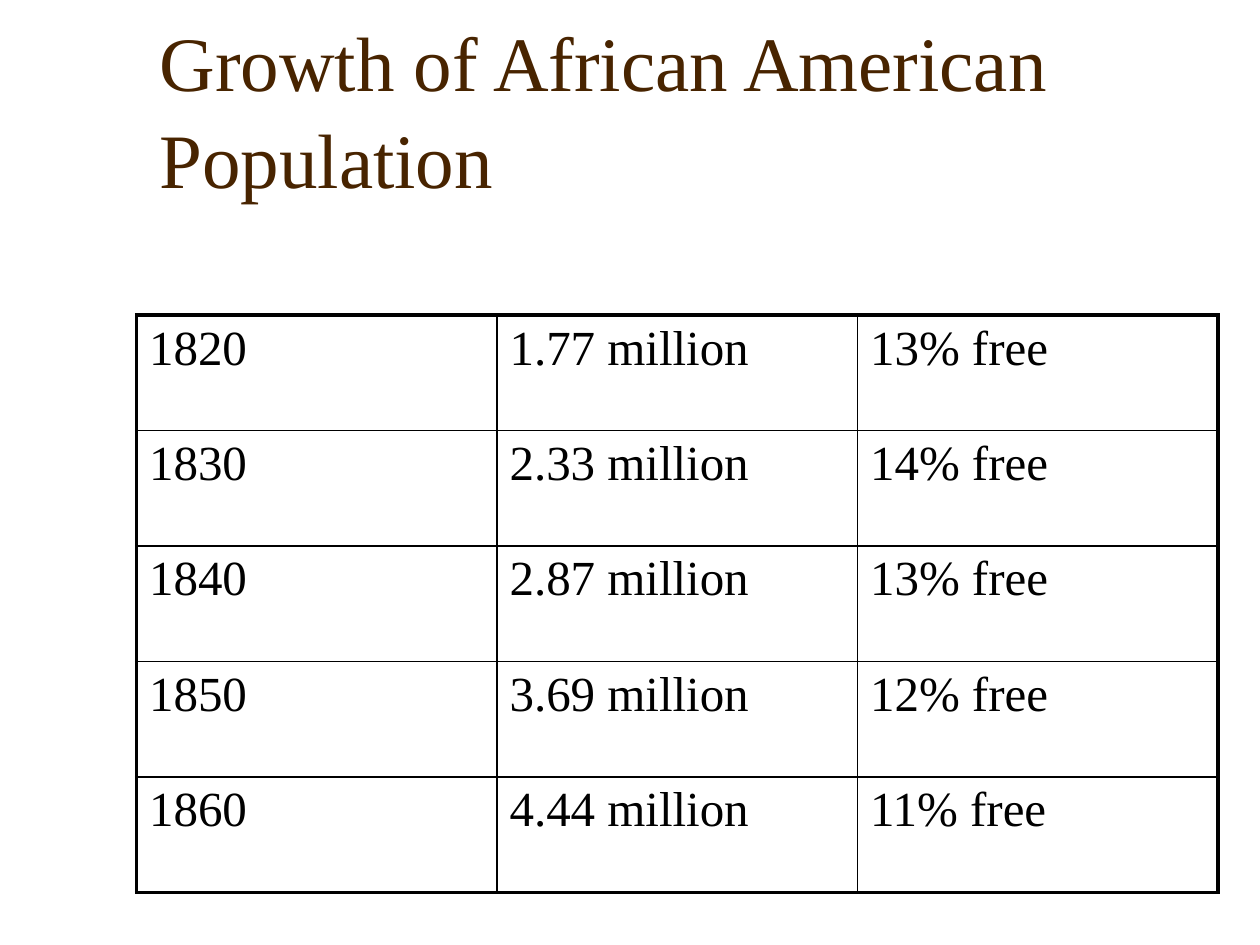
from dataclasses import dataclass

from lxml.etree import SubElement
from pptx import Presentation
from pptx.dml.color import RGBColor
from pptx.enum.text import MSO_ANCHOR, MSO_AUTO_SIZE, PP_ALIGN
from pptx.oxml.ns import qn
from pptx.slide import Slide
from pptx.util import Pt

POPULATION = [
    ("1820", "1.77 million", "13% free"),
    ("1830", "2.33 million", "14% free"),
    ("1840", "2.87 million", "13% free"),
    ("1850", "3.69 million", "12% free"),
    ("1860", "4.44 million", "11% free"),
]


def color(value):
    return RGBColor.from_string(value)


@dataclass
class SlideBuilder:
    slide: Slide
    font_name: str = "Times New Roman"
    title_color: str = "482400"
    text_color: str = "000000"
    title_size: float = 44
    cell_size: float = 28
    outer_line: float = 2.25
    inner_line: float = 1

    def format_font(self, paragraph, size, text_color):
        paragraph.font.name = self.font_name
        paragraph.font.size = Pt(size)
        paragraph.font.color.rgb = color(text_color)

    def add_title(self, text, left, top, width, height):
        title = self.slide.shapes.title
        title.left, title.top = Pt(left), Pt(top)
        title.width, title.height = Pt(width), Pt(height)
        frame = title.text_frame
        frame.text = text
        frame.word_wrap = True
        frame.auto_size = MSO_AUTO_SIZE.NONE
        frame.vertical_anchor = MSO_ANCHOR.BOTTOM
        paragraph = frame.paragraphs[0]
        paragraph.alignment = PP_ALIGN.LEFT
        paragraph.line_spacing = 1.05
        self.format_font(paragraph, self.title_size, self.title_color)

    def add_border(self, cell, side, width):
        properties = cell._tc.get_or_add_tcPr()
        line = SubElement(properties, qn(f"a:{side}"), w=str(Pt(width)))
        fill = SubElement(line, qn("a:solidFill"))
        SubElement(fill, qn("a:srgbClr"), val=self.text_color)

    def add_table(self, rows, left, top, column_width, row_height):
        row_count, column_count = len(rows), len(rows[0])
        table = self.slide.shapes.add_table(
            row_count, column_count, Pt(left), Pt(top),
            Pt(column_width * column_count), Pt(row_height * row_count),
        ).table
        table.first_row = table.horz_banding = False
        for row_index, row in enumerate(rows):
            for column_index, text in enumerate(row):
                cell = table.cell(row_index, column_index)
                cell.text = text
                paragraph = cell.text_frame.paragraphs[0]
                self.format_font(paragraph, self.cell_size, self.text_color)
                outer_sides = {
                    "lnL": column_index == 0,
                    "lnR": column_index == column_count - 1,
                    "lnT": row_index == 0,
                    "lnB": row_index == row_count - 1,
                }
                for side, is_outer in outer_sides.items():
                    width = self.outer_line if is_outer else self.inner_line
                    self.add_border(cell, side, width)
                cell.fill.background()


def main():
    presentation = Presentation()
    presentation.slide_width, presentation.slide_height = Pt(720), Pt(540)
    title_only = presentation.slide_layouts[5]
    builder = SlideBuilder(presentation.slides.add_slide(title_only))
    builder.add_title("Growth of African American Population", 84, 30, 612, 90)
    builder.add_table(POPULATION, 78, 180, column_width=206, row_height=66)
    presentation.save("out.pptx")


if __name__ == "__main__":
    main()
